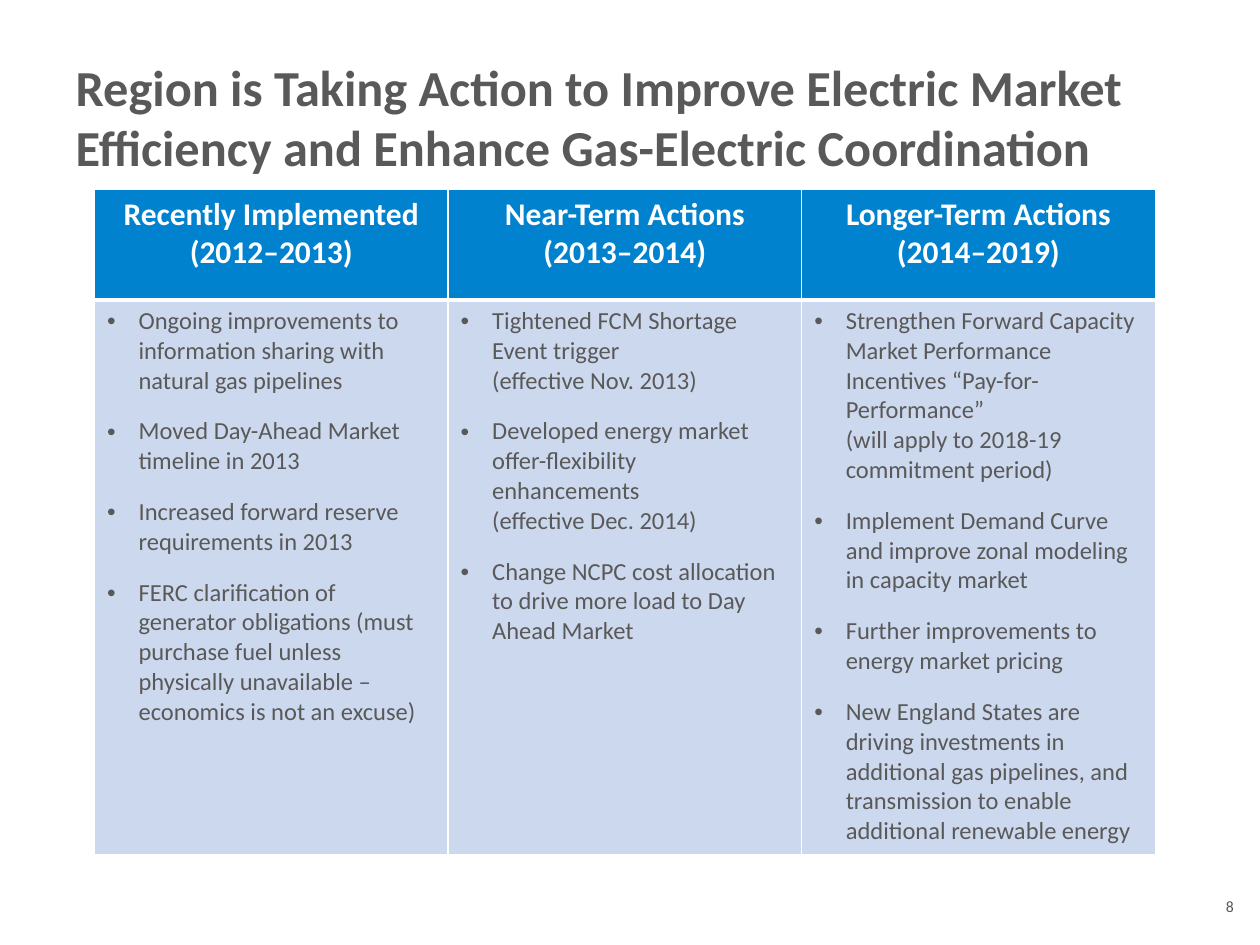
from pptx import Presentation
from pptx.dml.color import RGBColor
from pptx.enum.text import MSO_ANCHOR, MSO_AUTO_SIZE, PP_ALIGN
from pptx.oxml import parse_xml
from pptx.oxml.ns import nsdecls
from pptx.util import Inches, Pt

# Content
TITLE = ("Region is Taking Action to Improve Electric Market Efficiency "
         "and Enhance Gas-Electric Coordination")
PAGE_NUMBER = "8"
COLUMNS = [
    (["Recently Implemented", "(2012–2013)"], [
        "Ongoing improvements to information sharing with natural gas pipelines",
        "Moved Day-Ahead Market timeline in 2013",
        "Increased forward reserve requirements in 2013",
        "FERC clarification of generator obligations (must purchase fuel unless "
        "physically unavailable – economics is not an excuse)",
    ]),
    (["Near-Term Actions", "(2013–2014)"], [
        "Tightened FCM Shortage Event trigger\n(effective Nov. 2013)",
        "Developed energy market offer-flexibility enhancements\n(effective Dec. 2014)",
        "Change NCPC cost allocation to drive more load to Day Ahead Market",
    ]),
    (["Longer-Term Actions", "(2014–2019)"], [
        "Strengthen Forward Capacity Market Performance Incentives "
        "“Pay-for-Performance”\n(will apply to 2018-19 commitment period)",
        "Implement Demand Curve and improve zonal modeling in capacity market",
        "Further improvements to energy market pricing",
        "New England States are driving investments in additional gas pipelines, "
        "and transmission to enable additional renewable energy",
    ]),
]

THEME = {
    "font": "Calibri",
    "text": "595959", "white": "FFFFFF", "header": "0082CF", "body": "CCD8ED",
    "title_size": 28.8, "header_size": 18, "body_size": 14, "number_size": 9,
}
TABLE_LEFT, TABLE_TOP, TABLE_WIDTH = 0.75, 1.5, 8.42
HEADER_HEIGHT, BODY_HEIGHT = 0.88, 4.4


def add_text(p, text, size, color, bold=False):
    """Add one run per line, with line breaks between them."""
    for i, line in enumerate(text.split("\n")):
        if i:
            p.add_line_break()
        r = p.add_run()
        r.text = line
        r.font.name = THEME["font"]
        r.font.size = Pt(THEME[size])
        r.font.bold = bold
        r.font.color.rgb = RGBColor.from_string(THEME[color])


def paragraphs(tf, texts):
    """Yield a paragraph of the frame for each text."""
    for i, text in enumerate(texts):
        yield (tf.add_paragraph() if i else tf.paragraphs[0]), text


def set_bullet(p):
    pPr = p._p.get_or_add_pPr()
    pPr.set("marL", str(Inches(0.25)))
    pPr.set("indent", str(Inches(-0.25)))
    pPr.append(parse_xml(f'<a:buFont {nsdecls("a")} typeface="Arial"/>'))
    pPr.append(parse_xml(f'<a:buChar {nsdecls("a")} char="•"/>'))


def style_cell(cell, fill, top, bottom):
    cell.fill.solid()
    cell.fill.fore_color.rgb = RGBColor.from_string(THEME[fill])
    tcPr = cell._tc.get_or_add_tcPr()
    borders = {"lnL": 1, "lnR": 1, "lnT": top, "lnB": bottom}
    for i, (side, width) in enumerate(borders.items()):
        tcPr.insert(i, parse_xml(
            f'<a:{side} {nsdecls("a")} w="{Pt(width)}"><a:solidFill>'
            f'<a:srgbClr val="{THEME["white"]}"/></a:solidFill></a:{side}>'))


prs = Presentation()
prs.slide_width, prs.slide_height = Inches(10), Inches(7.5)
s = prs.slides.add_slide(prs.slide_layouts[5])

# Title
title = s.shapes.title
title.left, title.top = Inches(0.5), Inches(0.3)
title.width, title.height = Inches(9), Inches(1.25)
tf = title.text_frame
tf.word_wrap = True
tf.auto_size = MSO_AUTO_SIZE.NONE
tf.vertical_anchor = MSO_ANCHOR.MIDDLE
tf.paragraphs[0].alignment = PP_ALIGN.LEFT
add_text(tf.paragraphs[0], TITLE, "title_size", "text", bold=True)

# Table of actions
table = s.shapes.add_table(
    2, len(COLUMNS), Inches(TABLE_LEFT), Inches(TABLE_TOP),
    Inches(TABLE_WIDTH), Inches(HEADER_HEIGHT + BODY_HEIGHT)).table
table.rows[0].height = Inches(HEADER_HEIGHT)
table.rows[1].height = Inches(BODY_HEIGHT)
for col, (heading, actions) in enumerate(COLUMNS):
    table.columns[col].width = Inches(TABLE_WIDTH / len(COLUMNS))
    header, body = table.cell(0, col), table.cell(1, col)
    style_cell(header, "header", top=1, bottom=3)
    style_cell(body, "body", top=3, bottom=1)
    for p, text in paragraphs(header.text_frame, heading):
        p.alignment = PP_ALIGN.CENTER
        add_text(p, text, "header_size", "white", bold=True)
    for p, text in paragraphs(body.text_frame, actions):
        set_bullet(p)
        p.space_after = Pt(12)
        add_text(p, text, "body_size", "text")

# Page number
number = s.shapes.add_textbox(Inches(9.59), Inches(7.05), Inches(0.34), Inches(0.29))
tf = number.text_frame
tf.word_wrap = True
tf.margin_left = tf.margin_right = tf.margin_top = tf.margin_bottom = 0
tf.vertical_anchor = MSO_ANCHOR.MIDDLE
tf.paragraphs[0].alignment = PP_ALIGN.CENTER
add_text(tf.paragraphs[0], PAGE_NUMBER, "number_size", "text")

prs.save("out.pptx")
